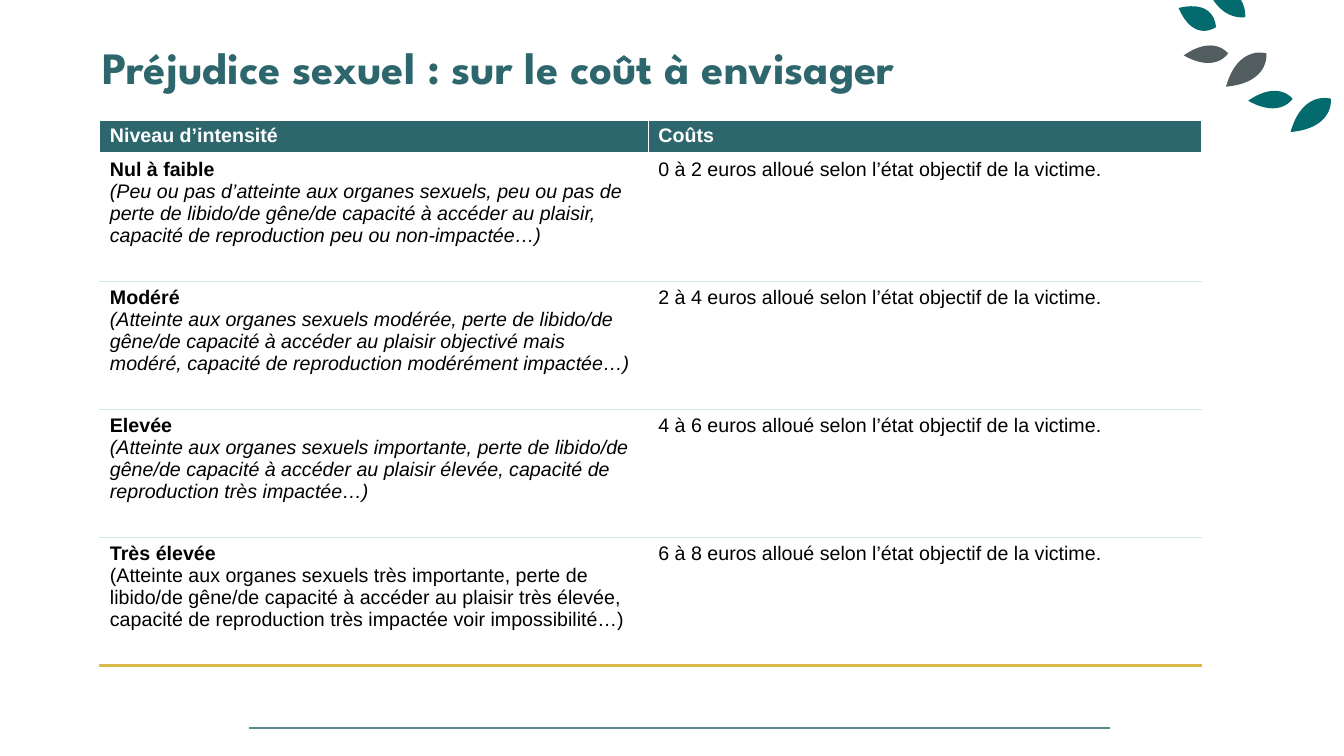
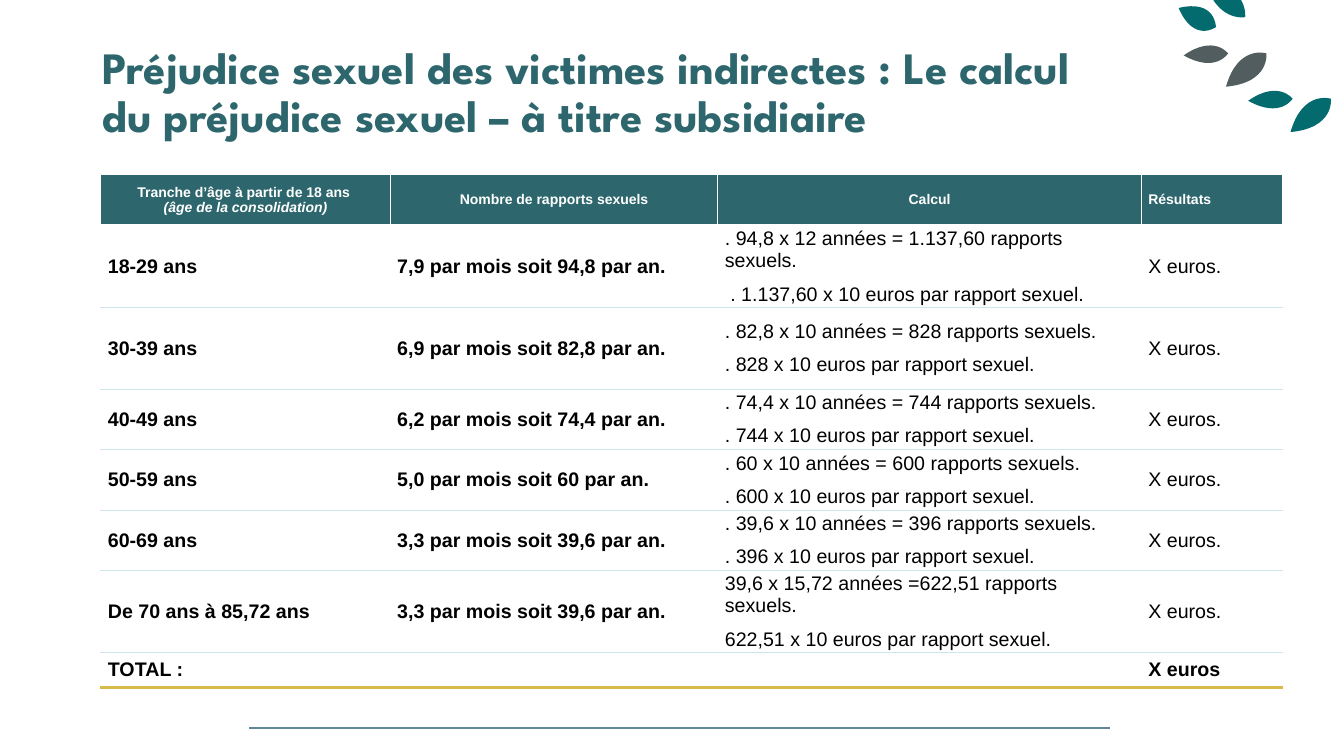
from lxml.etree import SubElement
from pptx import Presentation
from pptx.dml.color import RGBColor
from pptx.enum.shapes import MSO_CONNECTOR
from pptx.enum.text import MSO_ANCHOR, PP_ALIGN
from pptx.oxml.ns import qn
from pptx.util import Emu, Pt

EMU_PER_PX = 9144
SLIDE_W, SLIDE_H = 1333, 750
TITLE_BOX = (92, 40, 1019, 101)
RULE = (247, 722, 1101, 722)

WHITE = RGBColor(0xFF, 0xFF, 0xFF)
BLACK = RGBColor(0x00, 0x00, 0x00)
TEAL = RGBColor(0x2D, 0x67, 0x6D)
LEAF_GREEN = RGBColor(0x03, 0x6A, 0x6E)
LEAF_GREY = RGBColor(0x51, 0x5D, 0x5F)
RULE_BLUE = RGBColor(0x5F, 0x88, 0x96)
PALE = RGBColor(0xCD, 0xE7, 0xEA)
GOLD = RGBColor(0xD8, 0xB9, 0x49)
TITLE_FONT, BODY_FONT = "League Spartan", "Arial"

LOW_PAIR = [
    ((44, 17), [(0, 10), (32, 28), (44, 8), (30, -11)], (0, 0)),
    ((40, 34), [(0, 34), (44, 30), (40, 1), (12, -8)], (42, 7)),
]
TOP_PAIR = [
    ((41, 38), [(0, 0), (12, 45), (41, 39), (45, 9)], (25, -28)),
    ((37, 24), [(0, 2), (15, 37), (37, 21), (37, -7)], (0, 0)),
]
LEAVES = [
    (1238, 90, LOW_PAIR, LEAF_GREEN),
    (1169, 6, TOP_PAIR, LEAF_GREEN),
    (1174, 45, LOW_PAIR, LEAF_GREY),
]

COST_LEVELS = [
    ("Nul à faible", "(Peu ou pas d’atteinte aux organes sexuels, peu ou pas de perte de libido/de gêne/de capacité à accéder au plaisir, capacité de reproduction peu ou non-impactée…)", True),
    ("Modéré", "(Atteinte aux organes sexuels modérée, perte de libido/de gêne/de capacité à accéder au plaisir objectivé mais modéré, capacité de reproduction modérément impactée…)", True),
    ("Elevée", "(Atteinte aux organes sexuels importante, perte de libido/de gêne/de capacité à accéder au plaisir élevée, capacité de reproduction très impactée…)", True),
    ("Très élevée", "(Atteinte aux organes sexuels très importante, perte de libido/de gêne/de capacité à accéder au plaisir très élevée, capacité de reproduction très impactée voir impossibilité…)", False),
]

AGE_BANDS = [
    ("18-29 ans", "7,9 par mois soit 94,8 par an.",
     ". 94,8 x 12 années = 1.137,60 rapports sexuels.", " . 1.137,60 x 10 euros par rapport sexuel."),
    ("30-39 ans", "6,9 par mois soit 82,8 par an.",
     ". 82,8 x 10 années = 828 rapports sexuels.", ". 828 x 10 euros par rapport sexuel."),
    ("40-49 ans", "6,2 par mois soit 74,4 par an.",
     ". 74,4 x 10 années = 744 rapports sexuels.", ". 744 x 10 euros par rapport sexuel."),
    ("50-59 ans", "5,0 par mois soit 60 par an.",
     ". 60 x 10 années = 600 rapports sexuels.", ". 600 x 10 euros par rapport sexuel."),
    ("60-69 ans", "3,3 par mois soit 39,6 par an.",
     ". 39,6 x 10 années = 396 rapports sexuels.", ". 396 x 10 euros par rapport sexuel."),
    ("De 70 ans à 85,72 ans", "3,3 par mois soit 39,6 par an.",
     "39,6 x 15,72 années =622,51 rapports sexuels.", "622,51 x 10 euros par rapport sexuel."),
]


def px(n):
    """Turn px into EMU."""
    return Emu(round(n * EMU_PER_PX))


def write(tf, paras, size=14, color=BLACK, bold=False, italic=False, font=BODY_FONT,
          align=PP_ALIGN.LEFT, after=None, spacing=None):
    """Fill a text frame; a paragraph is a string or a list of (text, overrides) runs."""
    for i, para in enumerate(paras):
        p = tf.paragraphs[0] if i == 0 else tf.add_paragraph()
        p.alignment = align
        if after:
            p.space_after = Pt(after)
        if spacing:
            p.line_spacing = spacing
        for text, over in [(para, {})] if isinstance(para, str) else para:
            if text == "\n":
                p.add_line_break()
                continue
            r = p.add_run()
            r.text = text
            r.font.name, r.font.size = font, Pt(size)
            r.font.bold = over.get("bold", bold)
            r.font.italic = over.get("italic", italic)
            r.font.color.rgb = color


def add_leaf(shapes, x, y, size, leaf, color):
    """Draw one leaf in a box at x, y; leaf is its stem, bend, tip and bend."""
    w, h = size
    fb = shapes.build_freeform(px(x), px(y), scale=1.0)
    fb.add_line_segments([(px(x + w), px(y)), (px(x + w), px(y + h)), (px(x), px(y + h))], close=True)
    sp = fb.convert_to_shape()
    outline = next(sp._element.iter(qn("a:path")))
    for child in list(outline):
        outline.remove(child)
    stem, low, tip, high = leaf
    for tag, points in (("moveTo", [stem]), ("cubicBezTo", [low, tip, tip]),
                        ("cubicBezTo", [tip, high, stem]), ("close", [])):
        step = SubElement(outline, qn(f"a:{tag}"))
        for a, b in points:
            SubElement(step, qn("a:pt"), x=str(px(a)), y=str(px(b)))
    sp.shadow.inherit = False
    sp.fill.solid()
    sp.fill.fore_color.rgb = color
    sp.line.fill.background()


def add_page(prs, title, align=PP_ALIGN.LEFT):
    """Add a slide with its foot rule, leaves and title."""
    s = prs.slides.add_slide(prs.slide_layouts[6])
    rule = s.shapes.add_connector(MSO_CONNECTOR.STRAIGHT, *map(px, RULE))
    rule.line.color.rgb, rule.line.width = RULE_BLUE, Pt(1.5)
    SubElement(rule._element.spPr, qn("a:effectLst"))
    branch = s.shapes.add_group_shape()
    for x, y, pair, color in LEAVES:
        for size, leaf, (dx, dy) in pair:
            add_leaf(branch.shapes, x + dx, y + dy, size, leaf, color)
    tf = s.shapes.add_textbox(*map(px, TITLE_BOX)).text_frame
    tf.word_wrap = True
    write(tf, [title], size=32, color=TEAL, bold=True, font=TITLE_FONT, align=align, spacing=0.9)
    return s


def set_border(cell, side, color, width):
    """Draw one side of a cell."""
    ln = SubElement(cell._tc.get_or_add_tcPr(), qn(f"a:ln{side}"), w=str(Pt(width)))
    SubElement(SubElement(ln, qn("a:solidFill")), qn("a:srgbClr"), val=str(color))


def add_grid(s, x, y, height, cols, rows):
    """Add a table with a teal header row, pale row lines and a gold foot line."""
    frame = s.shapes.add_table(len(rows), len(cols), px(x), px(y), px(sum(cols)), px(height))
    table = frame.table
    table.horz_banding = False
    for col, w in zip(table.columns, cols):
        col.width = px(w)
    last = len(rows) - 1
    for i, h in enumerate(rows):
        table.rows[i].height = px(h)
        top = (WHITE, 1) if i < 2 else (PALE, 1)
        bottom = (WHITE, 3) if i == 0 else (GOLD, 2.25) if i == last else (PALE, 1)
        for cell in table.rows[i].cells:
            for side, line in zip("LRTB", ((WHITE, 1), (WHITE, 1), top, bottom)):
                set_border(cell, side, *line)
            if i == 0:
                cell.fill.solid()
                cell.fill.fore_color.rgb = TEAL
            else:
                cell.fill.background()
    frame.height = px(height)
    return table


def cost_slide(prs):
    """Build the slide of costs by level."""
    s = add_page(prs, "Préjudice sexuel : sur le coût à envisager ", PP_ALIGN.JUSTIFY)
    table = add_grid(s, 99, 119, 542, [544, 549], [32] + [127] * len(COST_LEVELS))
    for j, head in enumerate(("Niveau d’intensité", "Coûts")):
        write(table.cell(0, j).text_frame, [head], color=WHITE, bold=True)
    for i, (level, detail, italic) in enumerate(COST_LEVELS):
        write(table.cell(i + 1, 0).text_frame,
              [[(level, {"bold": True})], [(detail, {"italic": italic})]])
        write(table.cell(i + 1, 1).text_frame,
              [f"{2 * i} à {2 * i + 2} euros alloué selon l’état objectif de la victime."])


def calculation_slide(prs):
    """Build the slide of the calculation by age."""
    s = add_page(prs, "Préjudice sexuel des victimes indirectes : Le calcul du préjudice sexuel – à titre subsidiaire")
    table = add_grid(s, 100, 173, 467, [287, 325, 420, 140], [51, 62, 81, 60, 60, 60, 54, 35])
    for cell in table.iter_cells():
        cell.vertical_anchor = MSO_ANCHOR.MIDDLE
        cell.margin_left = cell.margin_right = px(7)
        cell.margin_top = cell.margin_bottom = 0
    age_head = [("Tranche d’âge à partir de 18 ans ", {}), ("\n", {}),
                ("(âge de la consolidation)", {"italic": True})]
    for j, head in enumerate((age_head, "Nombre de rapports sexuels", "Calcul", "Résultats")):
        write(table.cell(0, j).text_frame, [head], size=10, color=WHITE, bold=True, after=8,
              align=PP_ALIGN.LEFT if j == 3 else PP_ALIGN.CENTER)
    for i, (age, rate, *steps) in enumerate(AGE_BANDS, 1):
        for j, paras in enumerate(([age], [rate], steps, ["X euros."])):
            write(table.cell(i, j).text_frame, paras, bold=j < 2, after=8)
    total = len(AGE_BANDS) + 1
    for j, text in ((0, "TOTAL :"), (3, "X euros")):
        write(table.cell(total, j).text_frame, [text], bold=True, after=8)


def main():
    """Build and save the presentation."""
    prs = Presentation()
    prs.slide_width, prs.slide_height = px(SLIDE_W), px(SLIDE_H)
    cost_slide(prs)
    calculation_slide(prs)
    prs.save("out.pptx")


if __name__ == "__main__":
    main()
